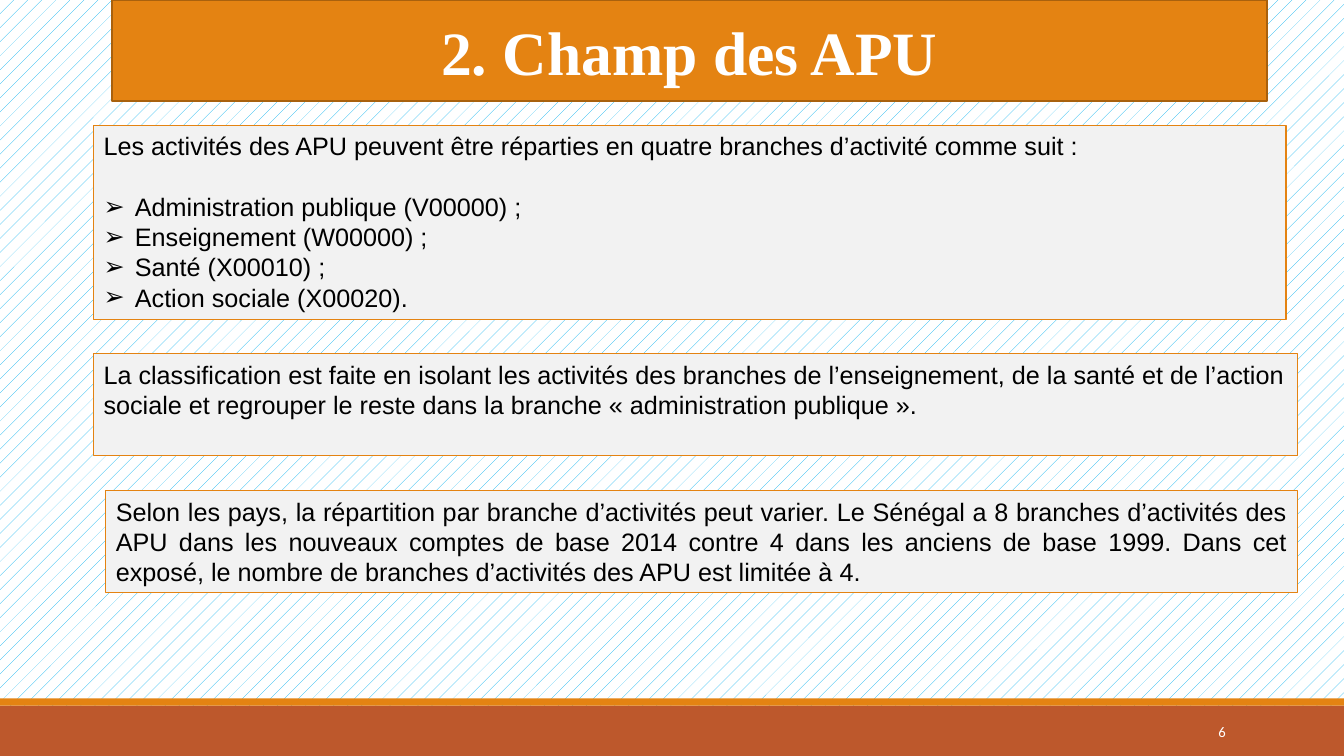
from lxml import etree
from pptx import Presentation
from pptx.dml.color import RGBColor
from pptx.enum.dml import MSO_PATTERN
from pptx.enum.shapes import MSO_SHAPE
from pptx.enum.text import MSO_ANCHOR, MSO_AUTO_SIZE, PP_ALIGN
from pptx.oxml.ns import qn
from pptx.util import Cm, Pt

RECTANGLE = MSO_SHAPE.RECTANGLE
DOTS = MSO_PATTERN.PERCENT_5
TOP, MIDDLE = MSO_ANCHOR.TOP, MSO_ANCHOR.MIDDLE
LEFT, CENTER, RIGHT, JUSTIFY = PP_ALIGN.LEFT, PP_ALIGN.CENTER, PP_ALIGN.RIGHT, PP_ALIGN.JUSTIFY
NO_AUTOFIT = MSO_AUTO_SIZE.NONE

ORANGE, RUST, DARK_ORANGE = "E48312", "BD582C", "A9610D"
PALE_GREY, WHITE, BLACK, SKY = "F2F2F2", "FFFFFF", "000000", "00B0F0"
TITLE_ONLY = 5
LINE_PITCH = 21.6
BULLET_INDENT = Cm(0.79)

INTRODUCTION = "Les activités des APU peuvent être réparties en quatre branches d’activité comme suit :"
BRANCHES = [
    "Administration publique (V00000) ;",
    "Enseignement (W00000) ;",
    "Santé (X00010) ;",
    "Action sociale (X00020).",
]
CLASSIFICATION = (
    "La classification est faite en isolant les activités des branches de l’enseignement, "
    "de la santé et de l’action sociale et regrouper le reste dans la branche "
    "« administration publique »."
)
COUNTRIES = (
    "Selon les pays, la répartition par branche d’activités peut varier. Le Sénégal a 8 branches "
    "d’activités des APU dans les nouveaux comptes de base 2014 contre 4 dans les anciens de base "
    "1999. Dans cet exposé, le nombre de branches d’activités des APU est limitée à 4."
)


def color(hex_string):
    """Return the colour for a hex string."""
    return RGBColor.from_string(hex_string)


def paint(shape, fill, line=None, width=0.75):
    """Give a shape a solid fill and an optional outline."""
    shape.fill.solid()
    shape.fill.fore_color.rgb = color(fill)
    if line:
        shape.line.color.rgb = color(line)
        shape.line.width = Pt(width)
    else:
        shape.line.fill.background()


def place(shape, left, top, width, height):
    """Move and size a shape in centimetres."""
    shape.left, shape.top = Cm(left), Cm(top)
    shape.width, shape.height = Cm(width), Cm(height)


def prepare_frame(shape, anchor):
    """Set wrapping and vertical anchoring of a shape's text."""
    frame = shape.text_frame
    frame.word_wrap = True
    frame.auto_size = NO_AUTOFIT
    frame.vertical_anchor = anchor
    return frame


def write(paragraph, text, size=18, font="Arial", fill=BLACK, bold=False, align=LEFT,
          pitch=None, before=0):
    """Fill a paragraph with formatted text."""
    paragraph.alignment = align
    paragraph.space_before = Pt(before)
    if pitch:
        paragraph.line_spacing = Pt(pitch)
    run = paragraph.add_run()
    run.text = text
    run.font.size = Pt(size)
    run.font.name = font
    run.font.bold = bold
    run.font.color.rgb = color(fill)


def add_bullet(paragraph):
    """Give a paragraph an arrowhead bullet with a hanging indent."""
    properties = paragraph._p.get_or_add_pPr()
    properties.set("marL", str(BULLET_INDENT))
    properties.set("indent", str(-BULLET_INDENT))
    etree.SubElement(properties, qn("a:buFont")).set("typeface", "Arial")
    etree.SubElement(properties, qn("a:buChar")).set("char", "➢")


def add_rectangle(slide, left, top, width, height, fill, line=None):
    """Add a flat rectangle."""
    shape = slide.shapes.add_shape(RECTANGLE, Cm(left), Cm(top), Cm(width), Cm(height))
    shape.shadow.inherit = False
    paint(shape, fill, line)
    return shape


def add_panel(slide, left, top, width, height, text, align=LEFT, bullets=()):
    """Add a grey panel with a paragraph and an optional bullet list."""
    panel = add_rectangle(slide, left, top, width, height, PALE_GREY, ORANGE)
    frame = prepare_frame(panel, TOP)
    write(frame.paragraphs[0], text, align=align, pitch=LINE_PITCH)
    for index, bullet in enumerate(bullets):
        paragraph = frame.add_paragraph()
        write(paragraph, bullet, pitch=LINE_PITCH, before=0 if index else LINE_PITCH)
        add_bullet(paragraph)


def format_title(title, text):
    """Turn the title placeholder into a rounded orange banner."""
    place(title, 2.82, 0, 29.11, 2.54)
    geometry = etree.SubElement(title.element.spPr, qn("a:prstGeom"))
    geometry.set("prst", "roundRect")
    etree.SubElement(geometry, qn("a:avLst"))
    paint(title, ORANGE, DARK_ORANGE, 1.25)
    frame = prepare_frame(title, MIDDLE)
    write(frame.paragraphs[0], text, size=44, font="Times New Roman", fill=WHITE,
          bold=True, align=CENTER)


def add_page_number(slide, number):
    """Add the page number in the footer band."""
    box = slide.shapes.add_textbox(Cm(27.51), Cm(17.93), Cm(3.63), Cm(1.02))
    frame = prepare_frame(box, MIDDLE)
    write(frame.paragraphs[0], number, size=10.5, font="Calibri", fill=WHITE, align=RIGHT)


def main():
    """Build and save the slide."""
    presentation = Presentation()
    presentation.slide_width, presentation.slide_height = Cm(33.87), Cm(19.05)
    slide = presentation.slides.add_slide(presentation.slide_layouts[TITLE_ONLY])

    background = slide.background.fill
    background.patterned()
    background.pattern = DOTS
    background.fore_color.rgb = color(SKY)
    background.back_color.rgb = color(WHITE)

    add_rectangle(slide, 0, 17.78, 33.87, 1.27, RUST)
    add_rectangle(slide, 0, 17.6, 33.87, 0.18, ORANGE)
    format_title(slide.shapes.title, "2. Champ des APU")
    add_panel(slide, 2.36, 3.17, 30.05, 4.88, INTRODUCTION, bullets=BRANCHES)
    add_panel(slide, 2.36, 8.92, 30.35, 2.56, CLASSIFICATION)
    add_panel(slide, 2.67, 12.37, 30.02, 2.56, COUNTRIES, align=JUSTIFY)
    add_page_number(slide, "6")
    presentation.save("out.pptx")


if __name__ == "__main__":
    main()
